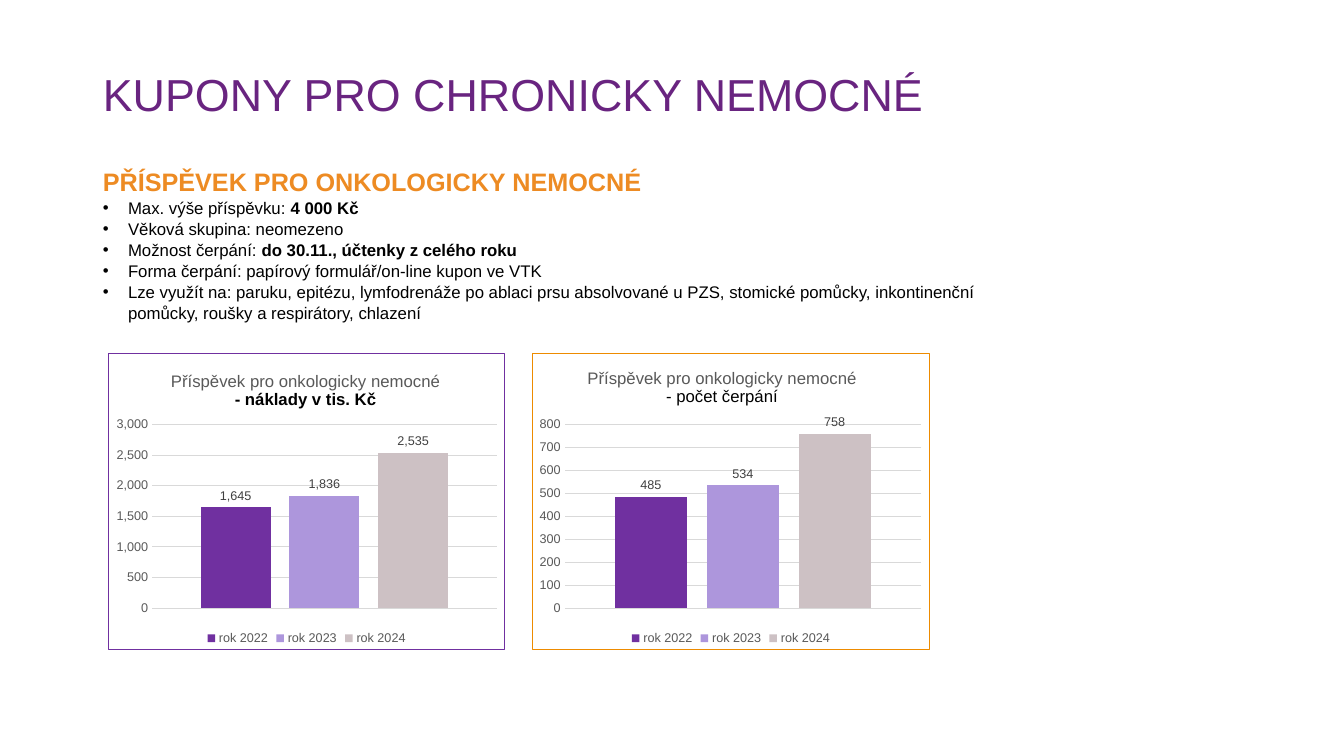
from dataclasses import dataclass
from typing import Any

from lxml.etree import _Element as Node
from pptx import Presentation
from pptx.chart.chart import Chart
from pptx.chart.data import CategoryChartData
from pptx.dml.color import RGBColor
from pptx.enum.chart import (XL_CHART_TYPE, XL_LABEL_POSITION,
                             XL_LEGEND_POSITION, XL_TICK_MARK)
from pptx.enum.text import MSO_ANCHOR, MSO_AUTO_SIZE, PP_ALIGN
from pptx.oxml import parse_xml
from pptx.oxml.ns import nsdecls, qn
from pptx.util import Inches, Pt

WIDE, HIGH = Inches(13.33), Inches(7.5)
FACE = "Arial"
COLORS = {
    "title": "692480", "head": "ED8B23", "text": "000000", "axis": "595959",
    "label": "404040", "grid": "D9D9D9", "violet": "7030A0",
    "lilac": "AD96DC", "stone": "CDC1C4", "orange": "ED8B00",
}
BARS = {"rok 2022": "violet", "rok 2023": "lilac", "rok 2024": "stone"}
NUMBER = {"number_format": "#,##0", "number_format_is_linked": False}
ITEMS = [
    ("Max. výše příspěvku: ", "4 000 Kč"),
    ("Věková skupina: neomezeno", ""),
    ("Možnost čerpání: ", "do 30.11., účtenky z celého roku"),
    ("Forma čerpání: papírový formulář/on-line kupon ve VTK", ""),
    ("Lze využít na: paruku, epitézu, lymfodrenáže po ablaci prsu absolvované "
     "u PZS, stomické pomůcky, inkontinenční pomůcky, roušky a respirátory, "
     "chlazení", ""),
]


@dataclass
class Box:
    """A frame in percent of the slide's width and height."""
    left: float
    top: float
    width: float
    height: float

    def place(self) -> dict[str, int]:
        return {"left": int(WIDE * self.left / 100),
                "top": int(HIGH * self.top / 100),
                "width": int(WIDE * self.width / 100),
                "height": int(HIGH * self.height / 100)}


@dataclass
class Panel:
    """One bar chart; spots are shares of the chart's frame."""
    topic: str
    bold: bool
    edge: str
    values: tuple[int, ...]
    spot: dict[str, float]
    plot: dict[str, float]


PANELS = [
    Panel("- náklady v tis. Kč", True, "violet", (1645, 1836, 2535),
          {"x": 0.15, "y": 0.05},
          {"x": 0.11, "y": 0.24, "w": 0.87, "h": 0.62}),
    Panel("- počet čerpání", False, "orange", (485, 534, 758),
          {"x": 0.13, "y": 0.04},
          {"x": 0.08, "y": 0.24, "w": 0.9, "h": 0.62}),
]


def apply(item: Any, style: dict[str, Any]) -> None:
    for name, value in style.items():
        setattr(item, name, value)


def paint(font: Any, size: float, color: str, bold: bool = False) -> None:
    apply(font, {"name": FACE, "size": Pt(size), "bold": bold})
    font.color.rgb = RGBColor.from_string(COLORS[color])


def write(para: Any, text: str, size: float, color: str,
          bold: bool = False) -> None:
    run = para.add_run()
    run.text = text
    paint(run.font, size, color, bold)


def indent(para: Any, left: float, mark: str = "") -> None:
    props = para._p.get_or_add_pPr()
    props.set("marL", str(Inches(left)))
    props.set("indent", str(-Inches(left)))
    bullet = f'<a:buChar {nsdecls("a")} char="{mark}"/>'
    props.append(parse_xml(bullet if mark else f'<a:buNone {nsdecls("a")}/>'))
    apply(para, {"space_before": Pt(0), "space_after": Pt(0),
                 "line_spacing": 1.04, "alignment": PP_ALIGN.LEFT})


def layout(part: Node, spot: dict[str, float], inner: bool = False) -> Node:
    """Give a chart part a fixed place."""
    for old in part.findall(qn("c:layout")):
        part.remove(old)
    modes = "".join(f'<c:{key}Mode val="edge"/>' for key in "xy")
    sizes = "".join(f'<c:{key} val="{val}"/>' for key, val in spot.items())
    target = '<c:layoutTarget val="inner"/>' if inner else ""
    return parse_xml(f'<c:layout {nsdecls("c")}><c:manualLayout>{target}'
                     f'{modes}{sizes}</c:manualLayout></c:layout>')


def frame(chart: Chart, color: str) -> None:
    """Draw the chart's white ground and its border."""
    chart._chartSpace.find(qn("c:chart")).addnext(parse_xml(
        f'<c:spPr {nsdecls("c", "a")}><a:solidFill><a:srgbClr val="FFFFFF"/>'
        f'</a:solidFill><a:ln w="{Pt(0.75)}"><a:solidFill>'
        f'<a:srgbClr val="{COLORS[color]}"/></a:solidFill></a:ln></c:spPr>'))


def draw(slide: Any, panel: Panel, box: Box) -> None:
    data = CategoryChartData(number_format="#,##0")
    data.categories = ["1"]
    for name, value in zip(BARS, panel.values):
        data.add_series(name, [value])
    place = box.place()
    chart = slide.shapes.add_chart(
        XL_CHART_TYPE.COLUMN_CLUSTERED, place["left"], place["top"],
        place["width"], place["height"], data).chart
    paint(chart.font, 10, "text")
    frame(chart, panel.edge)

    # Chart title
    text = chart.chart_title.text_frame
    write(text.paragraphs[0], "Příspěvek pro onkologicky nemocné", 12, "axis")
    write(text.add_paragraph(), panel.topic, 12, "text", panel.bold)
    title = chart.chart_title._element
    place_xml = layout(title, panel.spot)
    title.find(qn("c:tx")).addnext(place_xml)

    # Axes and legend
    chart.category_axis.visible = False
    axis = chart.value_axis
    apply(axis, {"minimum_scale": 0, "major_tick_mark": XL_TICK_MARK.NONE,
                 "minor_tick_mark": XL_TICK_MARK.NONE,
                 "has_major_gridlines": True})
    apply(axis.tick_labels, NUMBER)
    paint(axis.tick_labels.font, 9, "axis")
    axis.format.line.fill.background()
    grid = axis.major_gridlines.format.line
    grid.width = Pt(0.75)
    grid.color.rgb = RGBColor.from_string(COLORS["grid"])
    chart.has_legend = True
    apply(chart.legend, {"position": XL_LEGEND_POSITION.BOTTOM,
                         "include_in_layout": False})
    paint(chart.legend.font, 9, "axis")

    # Bars and their labels
    plot = chart.plots[0]
    apply(plot, {"gap_width": 139, "overlap": -27, "vary_by_categories": False})
    for bar, color in zip(plot.series, BARS.values()):
        bar.format.fill.solid()
        bar.format.fill.fore_color.rgb = RGBColor.from_string(COLORS[color])
        labels = bar.data_labels
        apply(labels, {"show_value": True, **NUMBER,
                       "position": XL_LABEL_POSITION.OUTSIDE_END})
        paint(labels.font, 9, "label")
    area = chart._chartSpace.find(qn("c:chart")).find(qn("c:plotArea"))
    area.insert(0, layout(area, panel.plot, True))


def main() -> None:
    deck = Presentation()
    apply(deck, {"slide_width": WIDE, "slide_height": HIGH})
    slide = deck.slides.add_slide(deck.slide_layouts[1])
    title, body = slide.placeholders

    # Title
    apply(title, Box(6.9, 7.33, 78.92, 11.07).place())
    apply(title.text_frame, {"vertical_anchor": MSO_ANCHOR.MIDDLE,
                             "auto_size": MSO_AUTO_SIZE.NONE})
    para = title.text_frame.paragraphs[0]
    apply(para, {"alignment": PP_ALIGN.LEFT, "line_spacing": 0.9})
    write(para, "KUPONY PRO CHRONICKY NEMOCNÉ", 32, "title")

    # Heading and list
    apply(body, Box(6.9, 21.2, 67.07, 71.33).place())
    text = body.text_frame
    text.auto_size = MSO_AUTO_SIZE.NONE
    para = text.paragraphs[0]
    indent(para, 0)
    write(para, "PŘÍSPĚVEK PRO ONKOLOGICKY NEMOCNÉ", 18, "head", True)
    for plain, strong in ITEMS:
        para = text.add_paragraph()
        indent(para, 0.25, "•")
        write(para, plain, 12, "text")
        if strong:
            write(para, strong, 12, "text", True)

    # Charts side by side
    for col, panel in enumerate(PANELS):
        draw(slide, panel, Box(8.03 + 31.58 * col, 46.67, 29.56, 39.33))
    deck.save("out.pptx")


if __name__ == "__main__":
    main()
